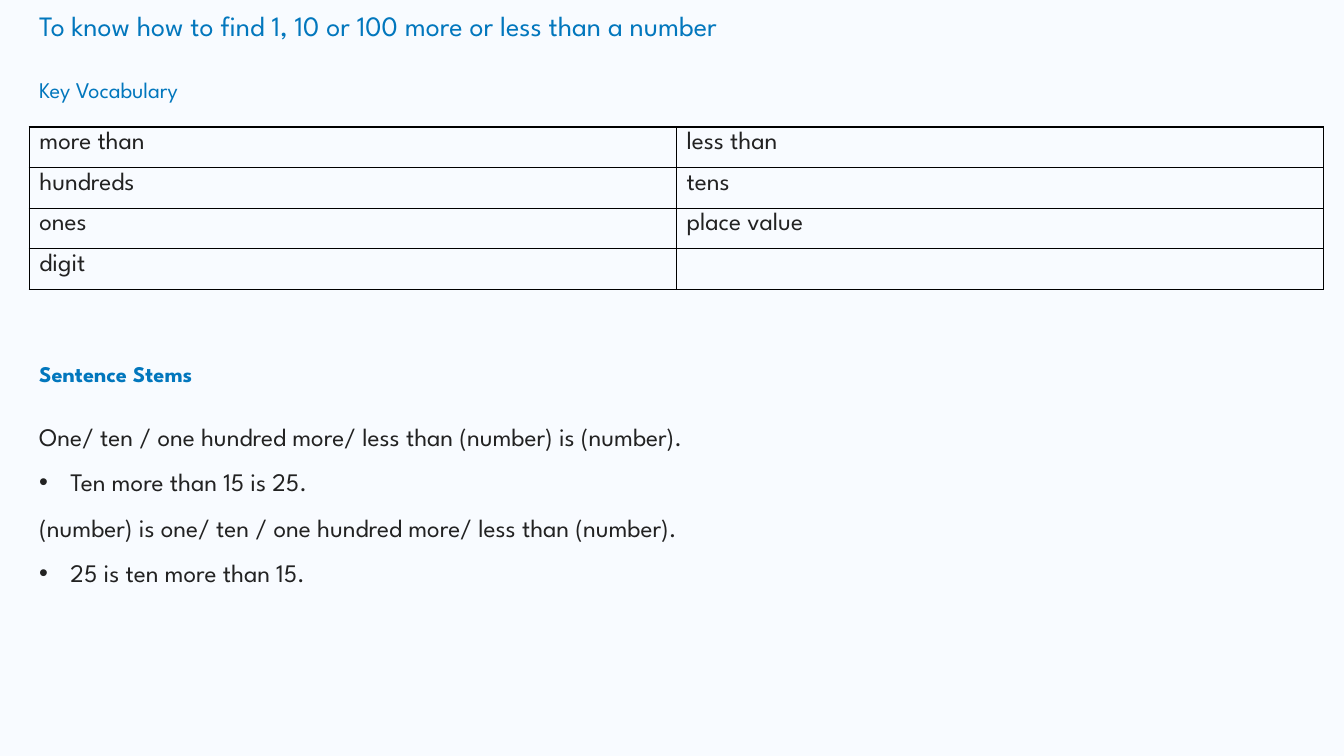
from lxml.etree import SubElement
from pptx import Presentation
from pptx.dml.color import RGBColor as Rgb
from pptx.enum.text import MSO_ANCHOR as Anchor
from pptx.oxml import parse_xml
from pptx.oxml.ns import nsdecls, qn
from pptx.util import Inches, Pt

COLORS = {"page": "F8FBFF", "heading": "0277BD", "body": "222222", "rule": "000000"}


class LessonSlide:
    font_name = "League Spartan"
    left = 2.18
    indent = Inches(0.31)

    def __init__(self, deck):
        self.deck = deck
        self.slide = deck.slides.add_slide(deck.slide_layouts[6])
        fill = self.slide.background.fill
        fill.solid()
        fill.fore_color.rgb = Rgb.from_string(COLORS["page"])

    def frame(self, top, width, height):
        across, down = self.deck.slide_width / 100, self.deck.slide_height / 100
        return (round(self.left * across), round(top * down),
                round(width * across), round(height * down))

    def style(self, paragraph, size, color, bold=False):
        for run in paragraph.runs:
            run.font.name = self.font_name
            run.font.size = Pt(size)
            run.font.bold = bold
            run.font.color.rgb = Rgb.from_string(COLORS[color])

    def text_box(self, top, width, height):
        text_frame = self.slide.shapes.add_textbox(*self.frame(top, width, height)).text_frame
        text_frame.word_wrap = True
        text_frame.vertical_anchor = Anchor.TOP
        return text_frame

    def heading(self, words, top, width, height, size, bold=False):
        text_frame = self.text_box(top, width, height)
        text_frame.text = words
        self.style(text_frame.paragraphs[0], size, "heading", bold)

    def bullet(self, paragraph):
        properties = paragraph._p.get_or_add_pPr()
        properties.set("marL", str(self.indent))
        properties.set("indent", str(-self.indent))
        color = SubElement(properties, qn("a:buClr"))
        SubElement(color, qn("a:srgbClr")).set("val", COLORS["body"])
        SubElement(properties, qn("a:buFont")).set("typeface", "Arial")
        SubElement(properties, qn("a:buChar")).set("char", "•")

    def stems(self, lines, top, width, height):
        text_frame = self.text_box(top, width, height)
        text_frame.text = "\n".join(words for words, _ in lines)
        for paragraph, (_, is_example) in zip(text_frame.paragraphs, lines):
            paragraph.line_spacing = 1.5
            if is_example:
                self.bullet(paragraph)
            self.style(paragraph, 18, "body")

    def outline(self, cell):
        properties = cell._tc.get_or_add_tcPr()
        for place, side in enumerate(("lnL", "lnR", "lnT", "lnB")):
            properties.insert(place, parse_xml(
                f'<a:{side} {nsdecls("a")} w="{Pt(1)}"><a:solidFill>'
                f'<a:srgbClr val="{COLORS["rule"]}"/></a:solidFill></a:{side}>'))

    def vocabulary(self, words, top, width, height):
        table = self.slide.shapes.add_table(
            len(words), len(words[0]), *self.frame(top, width, height)).table
        table.first_row = table.horz_banding = False
        for row, pair in enumerate(words):
            for column, word in enumerate(pair):
                cell = table.cell(row, column)
                cell.text = word
                cell.fill.background()
                self.style(cell.text_frame.paragraphs[0], 18, "body")
                self.outline(cell)


def main():
    deck = Presentation()
    deck.slide_width, deck.slide_height = Inches(13.33), Inches(7.5)
    lesson = LessonSlide(deck)
    lesson.heading("To know how to find 1, 10 or 100 more or less than a number",
                   0.53, 92.57, 5.87, 20)
    lesson.heading("Key Vocabulary", 9.47, 22.28, 6.13, 16)
    lesson.heading("Sentence Stems", 46.93, 22.28, 6.13, 16, bold=True)
    lesson.stems([
        ("One/ ten / one hundred more/ less than (number) is (number).", False),
        ("Ten more than 15 is 25.", True),
        ("(number) is one/ ten / one hundred more/ less than (number).", False),
        ("25 is ten more than 15.", True),
    ], 53.07, 96.25, 25.6)
    lesson.vocabulary([
        ("more than", "less than"),
        ("hundreds", "tens"),
        ("ones", "place value"),
        ("digit", ""),
    ], 16.8, 96.32, 21.47)
    deck.save("out.pptx")


if __name__ == "__main__":
    main()
